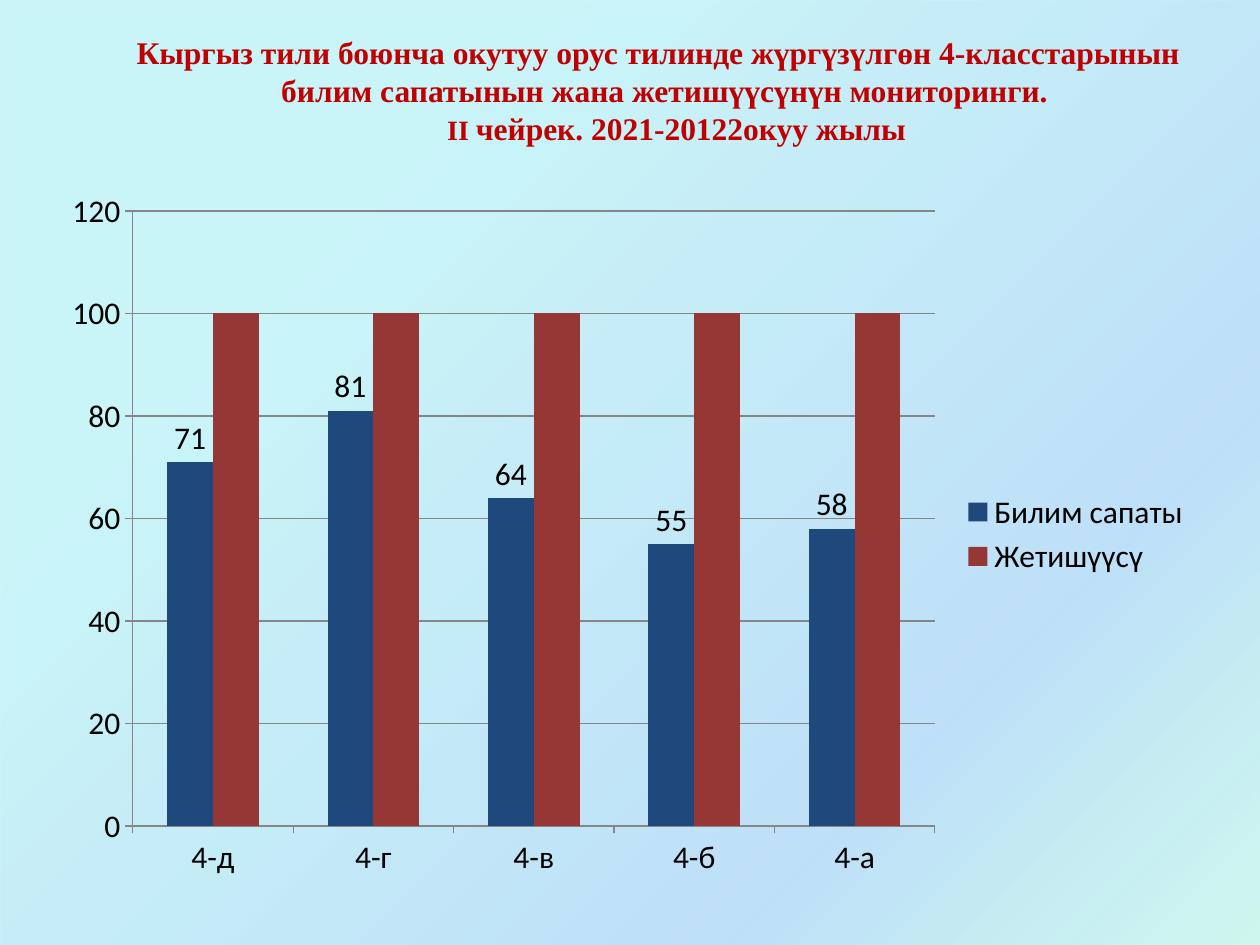
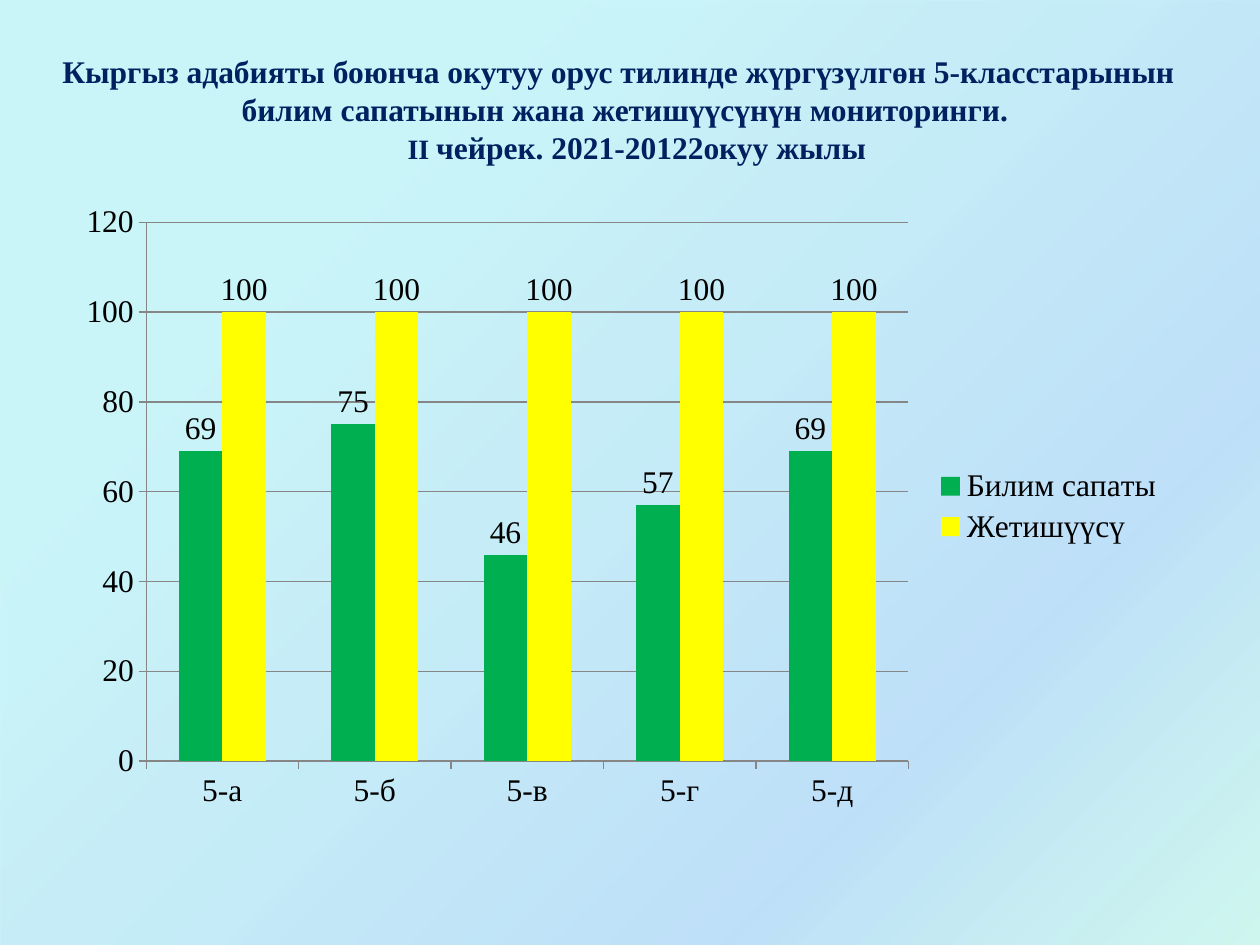
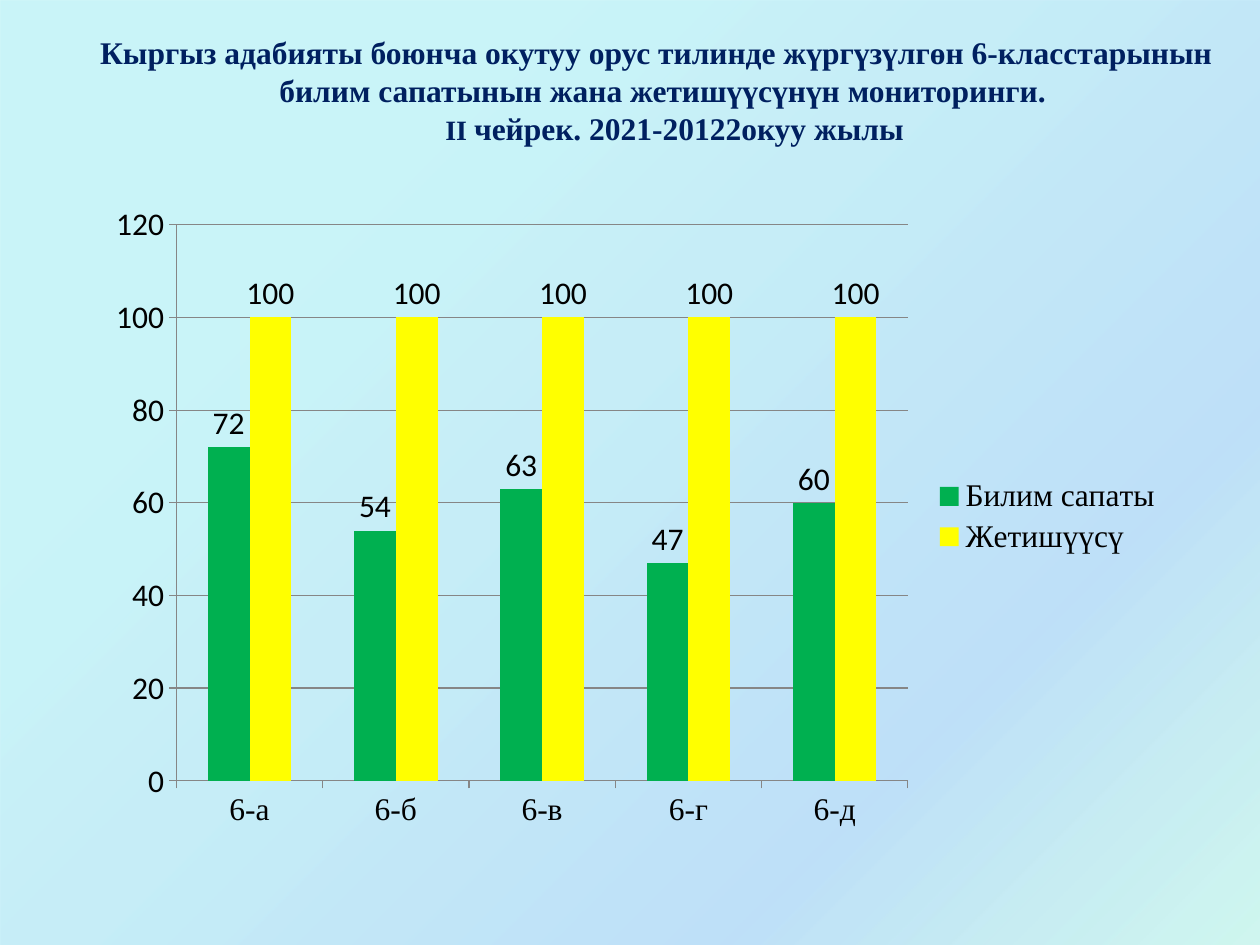
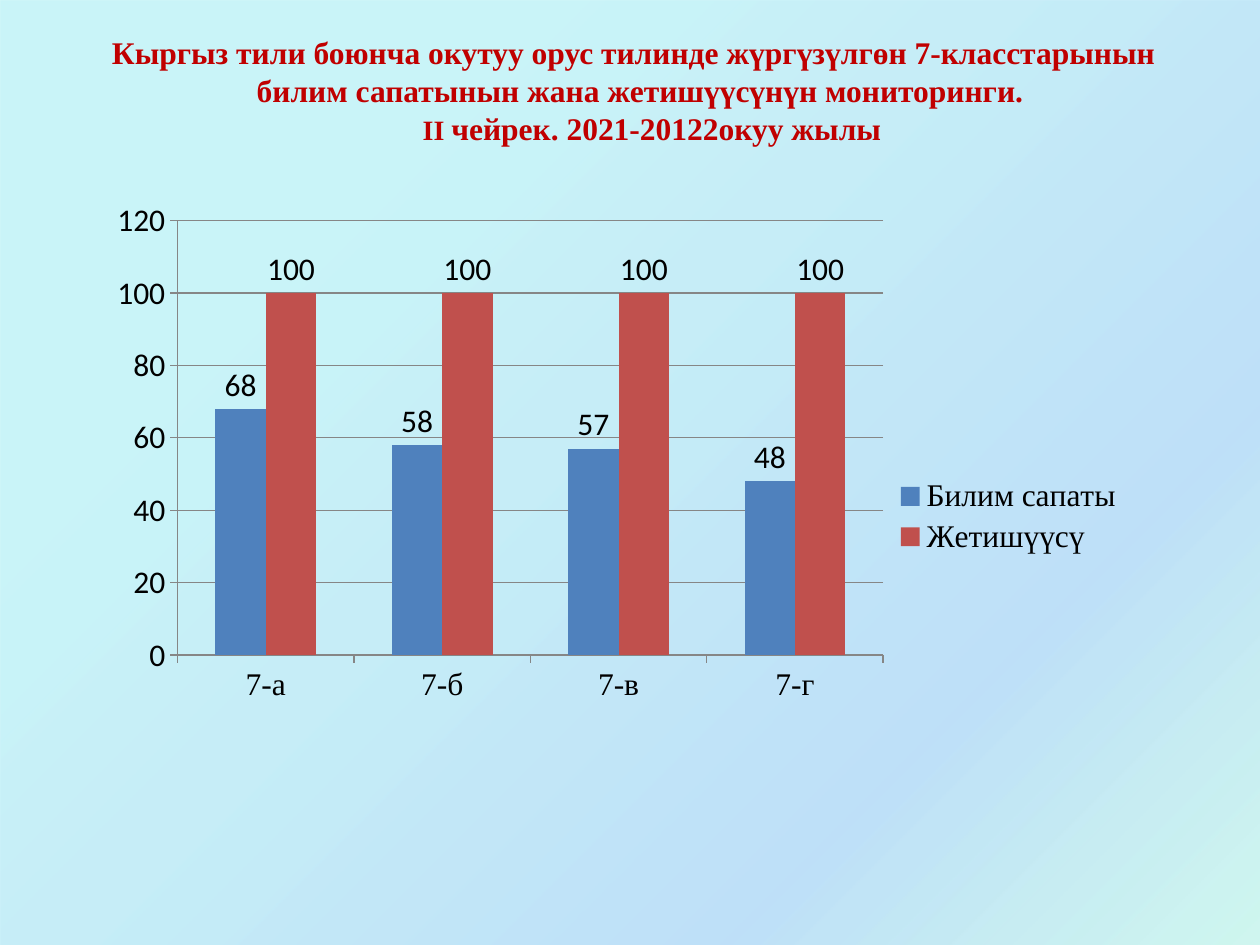
import dataclasses
import typing

import lxml.etree
import pptx
import pptx.chart.data
import pptx.dml.color
import pptx.enum.chart
import pptx.enum.shapes
import pptx.enum.text
import pptx.oxml.ns
import pptx.util

Inches = pptx.util.Inches
Pt = pptx.util.Pt
qn = pptx.oxml.ns.qn
Box = tuple[float, float, float, float]


class Stop(typing.NamedTuple):
    place: int
    hue: str
    alpha: int


@dataclasses.dataclass(frozen=True)
class Theme:
    serif: str = "Times New Roman"
    sans: str = "Calibri"
    size: int = 18
    small: int = 16
    red: str = "C00000"
    navy: str = "002060"
    ink: str = "000000"
    rule: str = "868686"
    dark: tuple[str, str] = ("1F497D", "953735")
    vivid: tuple[str, str] = ("00B050", "FFFF00")
    mid: tuple[str, str] = ("4F81BD", "C0504D")
    wash: tuple[Stop, ...] = (Stop(25, "21D6E0", 23), Stop(75, "0087E6", 25),
                              Stop(100, "03D4A8", 18), Stop(100, "005CBF", 26))


THEME = Theme()


@dataclasses.dataclass(frozen=True)
class Line:
    """One title line: (text, size) runs and the side margins that shift it."""
    runs: tuple[tuple[str, int], ...]
    left: float = 0
    right: float = 0


@dataclasses.dataclass(frozen=True)
class Page:
    topic: str
    grade: int
    hue: str
    head: Box
    area: Box
    marks: str
    scores: tuple[int, ...]
    fills: tuple[str, str]
    font: str = THEME.sans
    side: str = THEME.serif  # category axis and legend font
    names: tuple[str, str] = ("Билим сапаты", "Жетишүүсү")
    tags: tuple[bool, bool] = (True, True)
    inner: typing.Optional[Box] = None  # plot area, inches on the slide


PAGES = (
    Page("тили", 4, THEME.red, (0.94, 0.21, 8.75, 1.01), (0.39, 1.41, 9.22, 5.66),
         "дгвба", (71, 81, 64, 55, 58), THEME.dark, side=THEME.sans,
         names=("Билим сапаты ", "Жетишүүсү"), tags=(True, False)),
    Page("адабияты", 5, THEME.navy, (0, 0.36, 10, 1.01), (0.51, 1.53, 8.83, 4.98),
         "абвгд", (69, 75, 46, 57, 69), THEME.vivid, font=THEME.serif),
    Page("адабияты", 6, THEME.navy, (0.39, 0.21, 9.82, 1.01), (0.75, 1.53, 8.58, 5.14),
         "абвгд", (72, 54, 63, 47, 60), THEME.vivid),
    Page("тили", 7, THEME.red, (0.47, 0.21, 9.3, 1.01), (0.59, 1.53, 8.43, 5.14),
         "абвг", (68, 58, 57, 48), THEME.mid, inner=(1.41, 1.75, 5.6, 3.45)),
)


def rgb(code: str) -> pptx.dml.color.RGBColor:
    return pptx.dml.color.RGBColor.from_string(code)


def apply(item: typing.Any, vals: dict[str, typing.Any]) -> None:
    for key, val in vals.items():
        setattr(item, key, val)


def style(font: typing.Any, name: str, hue: str, size: int = THEME.size,
          bold: bool = False) -> None:
    apply(font, {"name": name, "size": Pt(size), "bold": bold})
    font.color.rgb = rgb(hue)


def paint(deck: typing.Any, slide: typing.Any) -> None:
    """Draw the diagonal wash and move it to the master, behind every slide."""
    wash = slide.shapes.add_shape(pptx.enum.shapes.MSO_SHAPE.RECTANGLE,
                                  *map(Inches, (0, 0, 10, 7.67)))
    wash.shadow.inherit = False
    wash.line.fill.background()
    wash.fill.gradient()
    wash.fill.gradient_angle = 315
    stops = wash.element.find(".//" + qn("a:gsLst"))
    for old in list(stops):
        stops.remove(old)
    for stop in THEME.wash:
        node = lxml.etree.SubElement(stops, qn("a:gs"), pos=str(stop.place * 1000))
        tone = lxml.etree.SubElement(node, qn("a:srgbClr"), val=stop.hue)
        lxml.etree.SubElement(tone, qn("a:alpha"), val=str(stop.alpha * 1000))
    tree = deck.slide_master.element.find(".//" + qn("p:spTree"))
    wash.element.find(".//" + qn("p:cNvPr")).set("id", str(len(tree) + 100))
    tree.insert(2, wash.element)


def add_title(slide: typing.Any, page: Page) -> None:
    full = THEME.size
    lines = (
        Line(((f"Кыргыз {page.topic} боюнча окутуу орус тилинде жүргүзүлгөн "
               f"{page.grade}-класстарынын", full),), right=0.18),
        Line((("билим сапатынын жана жетишүүсүнүн мониторинги.", full),), right=0.08),
        Line((("II ", THEME.small), ("чейрек. 2021-20122окуу жылы", full)), left=0.11),
    )
    title = slide.shapes.title
    apply(title, dict(zip(("left", "top", "width", "height"), map(Inches, page.head))))
    frame = title.text_frame
    apply(frame, {"word_wrap": True, "margin_left": 0, "margin_right": 0,
                  "auto_size": pptx.enum.text.MSO_AUTO_SIZE.NONE,
                  "vertical_anchor": pptx.enum.text.MSO_ANCHOR.MIDDLE})
    for num, line in enumerate(lines):
        para = frame.add_paragraph() if num else frame.paragraphs[0]
        para.alignment = pptx.enum.text.PP_ALIGN.CENTER
        props = para._p.get_or_add_pPr()
        props.set("marL", str(Inches(line.left)))
        props.set("marR", str(Inches(line.right)))
        props.set("indent", "0")
        for text, size in line.runs:
            run = para.add_run()
            run.text = text
            style(run.font, THEME.serif, page.hue, size, True)


def place_plot(chart: typing.Any, area: Box, inner: Box) -> None:
    """Fix the inner plot area, turned from inches into fractions of the chart."""
    left, top, width, height = area
    parts = ((inner[0] - left) / width, (inner[1] - top) / height,
             inner[2] / width, inner[3] / height)
    plot = chart.element.find(".//" + qn("c:plotArea"))
    for old in plot.findall(qn("c:layout")):
        plot.remove(old)
    layout = lxml.etree.Element(qn("c:layout"))
    plot.insert(0, layout)
    manual = lxml.etree.SubElement(layout, qn("c:manualLayout"))
    pairs = [("layoutTarget", "inner"), ("xMode", "edge"), ("yMode", "edge")]
    pairs += zip("xywh", map(str, parts))
    for tag, val in pairs:
        lxml.etree.SubElement(manual, qn("c:" + tag), val=val)


def add_bars(slide: typing.Any, page: Page) -> None:
    kinds = pptx.enum.chart
    data = pptx.chart.data.CategoryChartData()
    data.categories = [f"{page.grade}-{mark}" for mark in page.marks]
    full = (100,) * len(page.scores)
    for name, vals in zip(page.names, (page.scores, full)):
        data.add_series(name, vals)
    chart = slide.shapes.add_chart(
        kinds.XL_CHART_TYPE.COLUMN_CLUSTERED, *map(Inches, page.area), data).chart
    apply(chart, {"has_title": False, "has_legend": True})
    style(chart.font, page.font, THEME.ink)
    apply(chart.legend, {"position": kinds.XL_LEGEND_POSITION.RIGHT,
                         "include_in_layout": False})
    cats, vals = chart.category_axis, chart.value_axis
    apply(vals, {"minimum_scale": 0, "maximum_scale": 120, "major_unit": 20,
                 "has_major_gridlines": True})
    for axis in (cats, vals):
        axis.major_tick_mark = kinds.XL_TICK_MARK.OUTSIDE
    for part in (cats, vals, vals.major_gridlines):
        part.format.line.color.rgb = rgb(THEME.rule)
        part.format.line.width = Pt(0.75)
    for font in (cats.tick_labels.font, chart.legend.font):
        style(font, page.side, THEME.ink)
    plot = chart.plots[0]
    apply(plot, {"gap_width": 150, "overlap": 0, "vary_by_categories": False})
    for bars, code, tag in zip(plot.series, page.fills, page.tags):
        bars.format.fill.solid()
        bars.format.fill.fore_color.rgb = rgb(code)
        if tag:
            labels = bars.data_labels
            apply(labels, {"show_value": True,
                           "position": kinds.XL_LABEL_POSITION.OUTSIDE_END})
            style(labels.font, page.font, THEME.ink)
    if page.inner:
        place_plot(chart, page.area, page.inner)


def main() -> None:
    deck = pptx.Presentation()
    apply(deck, {"slide_width": Inches(10), "slide_height": Inches(7.5)})
    for page in PAGES:
        slide = deck.slides.add_slide(deck.slide_layouts.get_by_name("Title Only"))
        add_title(slide, page)
        add_bars(slide, page)
    paint(deck, deck.slides[0])
    deck.save("out.pptx")


if __name__ == "__main__":
    main()
